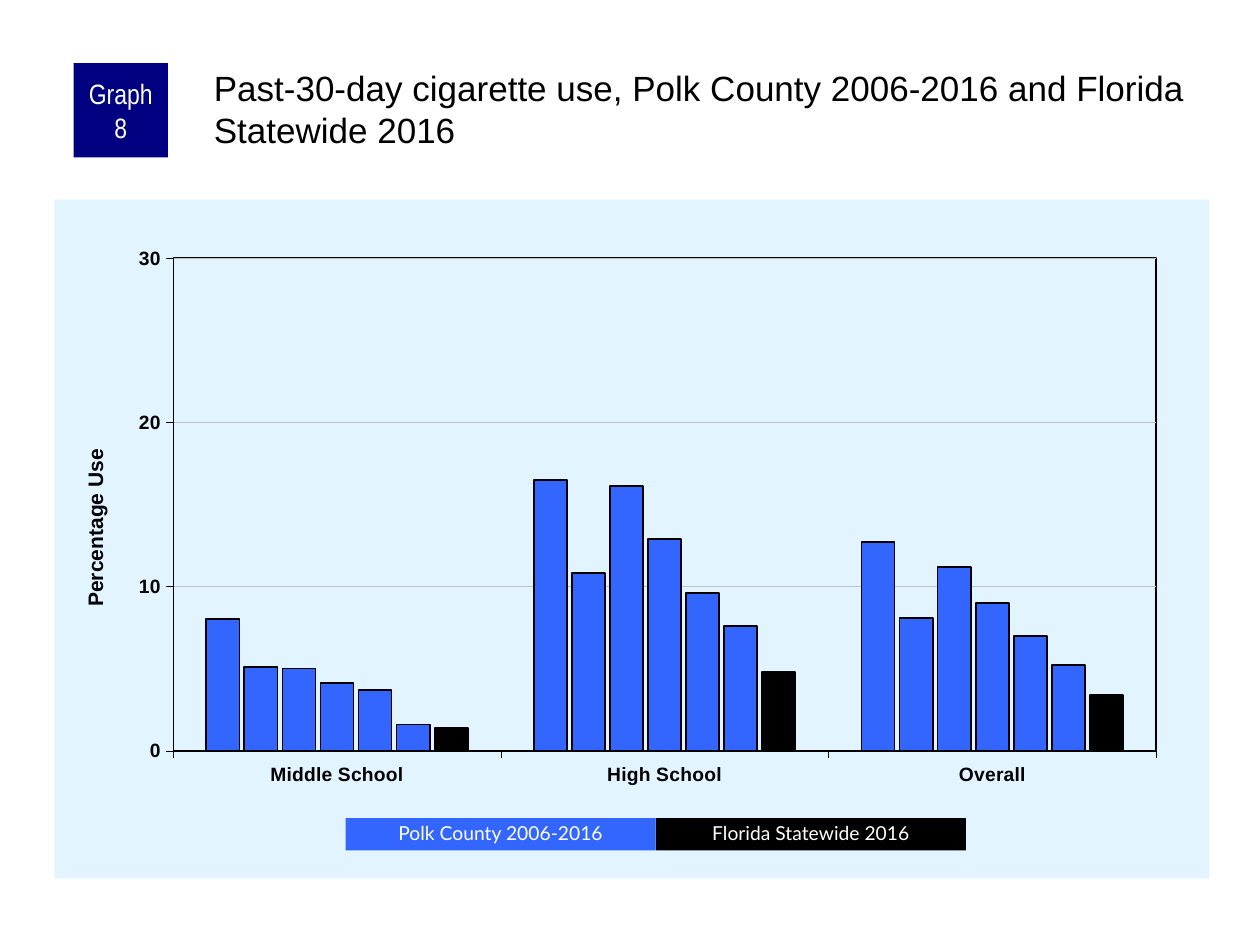
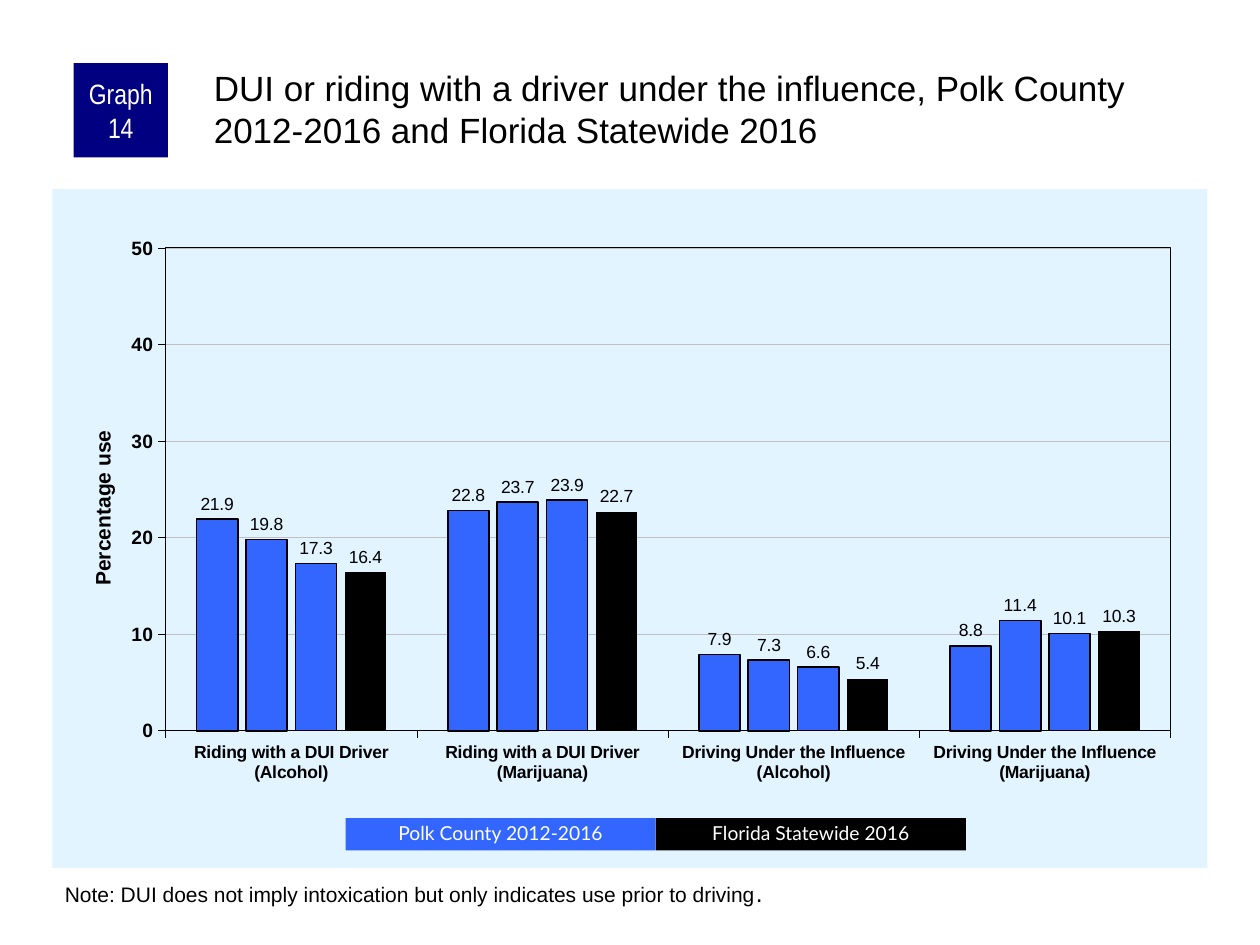
from dataclasses import dataclass

from lxml import etree
from pptx import Presentation
from pptx.chart.data import CategoryChartData
from pptx.dml.color import RGBColor
from pptx.enum.chart import XL_CHART_TYPE, XL_LABEL_POSITION, XL_TICK_MARK
from pptx.enum.shapes import MSO_SHAPE
from pptx.enum.text import MSO_ANCHOR, PP_ALIGN
from pptx.oxml import parse_xml
from pptx.util import Pt

COLUMN = XL_CHART_TYPE.COLUMN_CLUSTERED
ABOVE = XL_LABEL_POSITION.OUTSIDE_END
TICK_OUT, TICK_NONE = XL_TICK_MARK.OUTSIDE, XL_TICK_MARK.NONE
RECT = MSO_SHAPE.RECTANGLE
MIDDLE, TOP = MSO_ANCHOR.MIDDLE, MSO_ANCHOR.TOP
LEFT, CENTER = PP_ALIGN.LEFT, PP_ALIGN.CENTER
NS = ('xmlns:c="http://schemas.openxmlformats.org/drawingml/2006/chart" '
      'xmlns:a="http://schemas.openxmlformats.org/drawingml/2006/main"')


@dataclass(frozen=True)
class Theme:
    ink: str = "000000"
    paper: str = "FFFFFF"
    navy: str = "000080"
    blue: str = "3366FF"
    pale: str = "E1F4FF"
    grid: str = "C0C0C0"
    font: str = "Arial"
    narrow: str = "Arial Narrow"
    key: str = "Lato"
    head: float = 20
    badge: float = 16
    note: float = 12
    stop: float = 14
    axis: float = 11
    name: float = 12
    label: float = 10


T = Theme()

BADGE = (42, 36, 54, 54)
HEAD = (120, 36, 570, 60)
NOTE = (30, 498, 660, 24.5)
KEY = (197.5, 467.5, 177.25, 18.5)

GRAPHS = [
    dict(
        num="8",
        head="Past-30-day cigarette use, Polk County 2006-2016 and Florida Statewide 2016",
        keys=["Polk County 2006-2016", "Florida Statewide 2016"],
        note=[],
        box=(31, 114, 660, 388),
        plot=(0.103, 0.086, 0.851, 0.726),
        axis="Percentage Use", spot=(0.021, 0.362),
        top=30, gap=200, lap=-15, size=11, labels=False,
        lines=[1] * 7,
        cats=["Middle School", "High School", "Overall"],
        rows=[(8, 16.5, 12.7), (5.1, 10.8, 8.1), (5, 16.1, 11.2),
              (4.1, 12.9, 9), (3.7, 9.6, 7), (1.6, 7.6, 5.2), (1.4, 4.8, 3.4)],
    ),
    dict(
        num="14",
        head="DUI or riding with a driver under the influence, "
             "Polk County 2012-2016 and Florida Statewide 2016",
        keys=["Polk County 2012-2016", "Florida Statewide 2016"],
        note=[("Note: DUI does not imply intoxication but only indicates "
               "use prior to driving", T.note), (".", T.stop)],
        box=(30, 108, 660, 388),
        plot=(0.098, 0.087, 0.87, 0.711),
        axis="Percentage use", spot=(0.029, 0.35),
        top=50, gap=150, lap=-20, size=10, labels=True,
        lines=[1, 1, 0.75, 0],
        cats=["Riding with a DUI Driver (Alcohol)", "Riding with a DUI Driver (Marijuana)",
              "Driving Under the Influence (Alcohol)",
              "Driving Under the Influence (Marijuana)"],
        rows=[(21.9, 22.8, 7.9, 8.8), (19.8, 23.7, 7.3, 11.4),
              (17.3, 23.9, 6.6, 10.1), (16.4, 22.7, 5.4, 10.3)],
    ),
]


def rgb(color):
    return RGBColor.from_string(color)


def pts(box):
    return [Pt(v) for v in box]


def style(font, size, color=T.ink, face=T.font, bold=False):
    font.size, font.name, font.bold = Pt(size), face, bold
    font.color.rgb = rgb(color)


def stroke(line, color, width):
    if width:
        line.color.rgb = rgb(color)
        line.width = Pt(width)
    else:
        line.fill.background()


def write(shape, runs, color=T.ink, face=T.font, align=LEFT, anchor=TOP,
          pad=(7.2, 3.6, 7.2, 3.6), space=None):
    frame = shape.text_frame
    frame.word_wrap = True
    frame.vertical_anchor = anchor
    (frame.margin_left, frame.margin_top,
     frame.margin_right, frame.margin_bottom) = pts(pad)
    para = frame.paragraphs[0]
    para.alignment = align
    para.line_spacing = space
    for text, size in runs:
        run = para.add_run()
        run.text = text
        style(run.font, size, color, face)


def block(slide, box, fill):
    shape = slide.shapes.add_shape(RECT, *pts(box))
    shape.shadow.inherit = False
    shape.fill.solid()
    shape.fill.fore_color.rgb = rgb(fill)
    shape.line.fill.background()
    return shape


def place(node, index, spot, inner=False):
    for old in node.xpath("c:layout"):
        node.remove(old)
    layout = parse_xml(f"<c:layout {NS}><c:manualLayout/></c:layout>")
    space = layout.nsmap["c"]
    parts = [("layoutTarget", "inner")] if inner else []
    parts += [("xMode", "edge"), ("yMode", "edge")]
    parts += zip("xywh", spot)
    for tag, val in parts:
        etree.SubElement(layout[0], f"{{{space}}}{tag}").set("val", str(val))
    node.insert(index, layout)


def solid(color):
    return f'<a:solidFill><a:srgbClr val="{color}"/></a:solidFill>'


def props(inside):
    return parse_xml(f"<c:spPr {NS}>{inside}</c:spPr>")


def draw_axis(axis, size):
    axis.major_tick_mark, axis.minor_tick_mark = TICK_OUT, TICK_NONE
    style(axis.tick_labels.font, size, bold=True)
    stroke(axis.format.line, T.ink, 0.25)


def draw_chart(slide, graph):
    data = CategoryChartData()
    data.categories = graph["cats"]
    for i, row in enumerate(graph["rows"], 1):
        data.add_series(f"Series {i}", row)
    chart = slide.shapes.add_chart(COLUMN, *pts(graph["box"]), data).chart
    chart.has_legend = chart.has_title = False
    style(chart.font, T.axis)

    bars = chart.plots[0]
    bars.gap_width, bars.overlap = graph["gap"], graph["lap"]
    bars.vary_by_categories = False
    last = len(graph["rows"]) - 1
    for i, (row, width) in enumerate(zip(bars.series, graph["lines"])):
        row.invert_if_negative = False
        row.format.fill.solid()
        row.format.fill.fore_color.rgb = rgb(T.ink if i == last else T.blue)
        stroke(row.format.line, T.ink, width)
        if graph["labels"]:
            labels = row.data_labels
            labels.show_value = True
            labels.position = ABOVE
            labels.number_format, labels.number_format_is_linked = "0.0", False
            style(labels.font, T.label)

    draw_axis(chart.category_axis, graph["size"])
    scale = chart.value_axis
    draw_axis(scale, T.axis)
    scale.minimum_scale, scale.maximum_scale, scale.major_unit = 0, graph["top"], 10
    scale.has_major_gridlines = True
    stroke(scale.major_gridlines.format.line, T.grid, 0.25)
    run = scale.axis_title.text_frame.paragraphs[0].add_run()
    run.text = graph["axis"]
    style(run.font, T.name, bold=True)

    root = chart.element
    title = root.xpath(".//c:valAx/c:title")[0]
    title.xpath(".//a:bodyPr")[0].set("rot", "-5400000")
    place(title, 1, graph["spot"])
    area = root.xpath(".//c:plotArea")[0]
    place(area, 0, graph["plot"], inner=True)
    area.append(props(f'<a:noFill/><a:ln w="9525">{solid(T.ink)}</a:ln>'))
    root.xpath("c:chart")[0].addnext(props(solid(T.pale) + "<a:ln><a:noFill/></a:ln>"))


def draw(deck, graph):
    slide = deck.slides.add_slide(deck.slide_layouts[6])
    draw_chart(slide, graph)
    write(block(slide, BADGE, T.navy), [(f"Graph {graph['num']}", T.badge)],
          T.paper, T.narrow, CENTER, MIDDLE, (3.6, 0, 3.6, 0))
    write(slide.shapes.add_textbox(*pts(HEAD)), [(graph["head"], T.head)],
          pad=(2.2, 2.2, 0, 0))
    if graph["note"]:
        write(slide.shapes.add_textbox(*pts(NOTE)), graph["note"])
    left, top, wide, high = KEY
    for i, (text, fill) in enumerate(zip(graph["keys"], (T.blue, T.ink))):
        key = block(slide, (left + i * wide, top, wide, high), fill)
        write(key, [(text, T.axis)], T.paper, T.key, CENTER, MIDDLE, space=0.9)


def main():
    deck = Presentation()
    deck.slide_width, deck.slide_height = Pt(720), Pt(540)
    for graph in GRAPHS:
        draw(deck, graph)
    deck.save("out.pptx")


if __name__ == "__main__":
    main()
